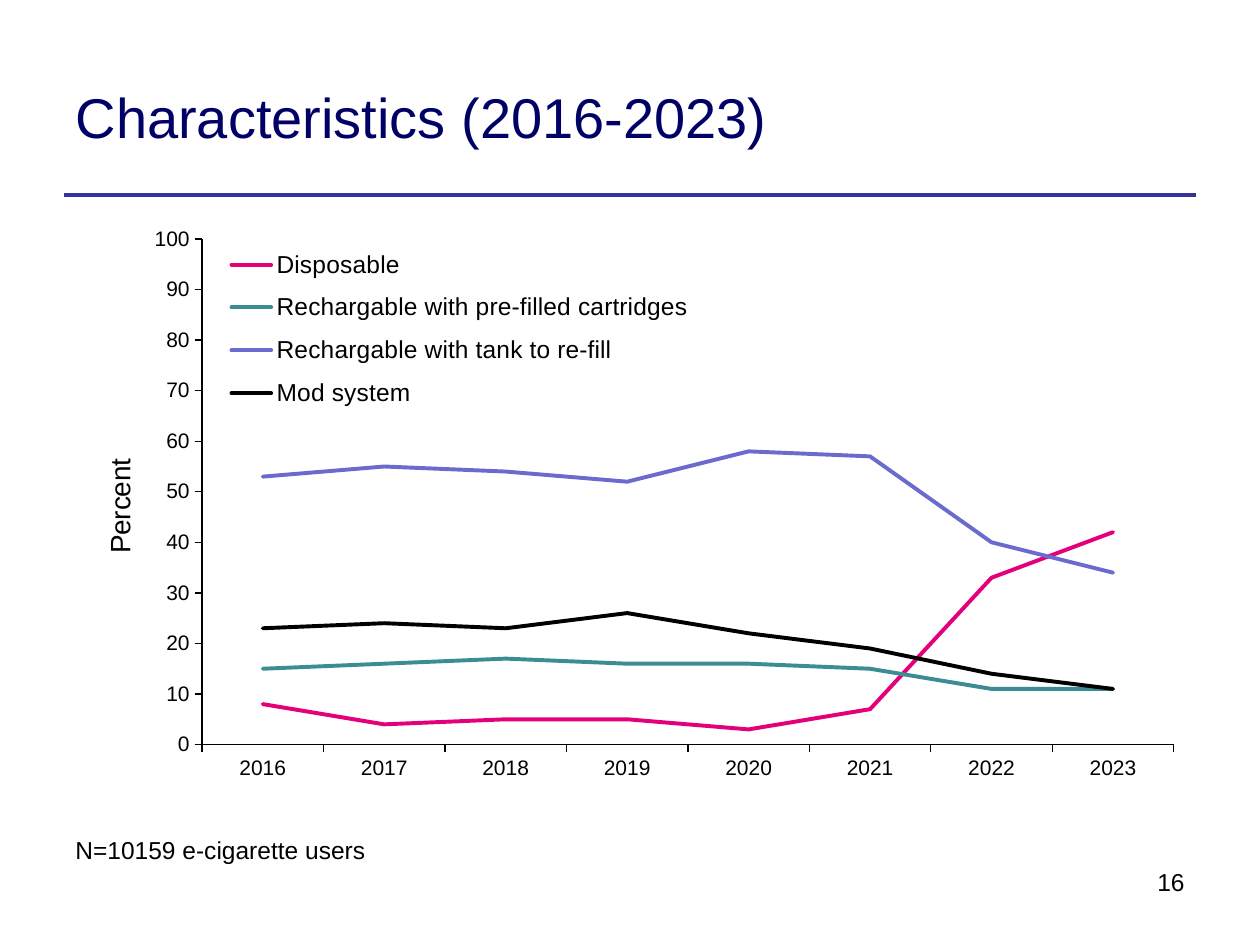
from lxml.etree import SubElement
from pptx import Presentation
from pptx.chart.data import CategoryChartData
from pptx.dml.color import RGBColor
from pptx.enum.chart import XL_CHART_TYPE as ChartType, XL_LEGEND_POSITION as LegendPosition
from pptx.enum.chart import XL_TICK_MARK as TickMark
from pptx.enum.shapes import MSO_CONNECTOR as Connector
from pptx.enum.text import MSO_ANCHOR as Anchor, PP_ALIGN as Align
from pptx.oxml import parse_xml
from pptx.oxml.ns import nsdecls, qn
from pptx.util import Cm, Pt

FONT = "Arial"
COLORS = {
    "title": "000066",
    "rule": "333399",
    "text": "000000",
    "disposable": "E5007B",
    "cartridge": "3C8C93",
    "tank": "6B6BCF",
    "mod": "000000",
}
YEARS = [str(year) for year in range(2016, 2024)]
DEVICES = [
    ("Disposable", "disposable", (8, 4, 5, 5, 3, 7, 33, 42)),
    ("Rechargable with pre-filled cartridges", "cartridge", (15, 16, 17, 16, 16, 15, 11, 11)),
    ("Rechargable with tank to re-fill", "tank", (53, 55, 54, 52, 58, 57, 40, 34)),
    ("Mod system", "mod", (23, 24, 23, 26, 22, 19, 14, 11)),
]


def color(name):
    return RGBColor.from_string(COLORS[name])


def style_font(font, size, name="text"):
    font.name = FONT
    font.size = Pt(size)
    font.bold = False
    font.color.rgb = color(name)


def style_line(line, name, width):
    line.color.rgb = color(name)
    line.width = Pt(width)


def add_run(para, text, size, name="text"):
    span = para.add_run()
    span.text = text
    style_font(span.font, size, name)


def add_title(page, text):
    title = page.shapes.title
    title.left, title.top, title.width, title.height = Cm(1.27), Cm(0.76), Cm(20.04), Cm(3.18)
    title.text_frame.vertical_anchor = Anchor.MIDDLE
    para = title.text_frame.paragraphs[0]
    para.alignment = Align.LEFT
    add_run(para, text, 32, "title")


def add_rule(page):
    rule = page.shapes.add_connector(Connector.STRAIGHT, Cm(1.3), Cm(3.94), Cm(24.1), Cm(3.94))
    style_line(rule.line, "rule", 2.25)
    SubElement(rule._element.spPr, qn("a:effectLst"))


def add_label(page, text, left, top, width, height, align=Align.LEFT):
    box = page.shapes.add_textbox(Cm(left), Cm(top), Cm(width), Cm(height))
    box.text_frame.word_wrap = True
    para = box.text_frame.paragraphs[0]
    para.alignment = align
    add_run(para, text, 14)


def place(element, index, inner=False, **fractions):
    for old in element.findall(qn("c:layout")):
        element.remove(old)
    layout = parse_xml(f"<c:layout {nsdecls('c')}><c:manualLayout/></c:layout>")
    settings = {"layoutTarget": "inner"} if inner else {}
    settings.update(xMode="edge", yMode="edge", **fractions)
    for tag, value in settings.items():
        SubElement(layout[0], qn(f"c:{tag}")).set("val", str(value))
    element.insert(index, layout)


def style_axis(axis):
    axis.has_major_gridlines = False
    axis.major_tick_mark = TickMark.OUTSIDE
    axis.minor_tick_mark = TickMark.NONE
    style_font(axis.tick_labels.font, 12)
    style_line(axis.format.line, "text", 0.75)


def add_line_chart(page):
    data = CategoryChartData()
    data.categories = YEARS
    for label, _, values in DEVICES:
        data.add_series(label, values)
    frame = page.shapes.add_chart(
        ChartType.LINE, Cm(1.27), Cm(4.37), Cm(22.86), Cm(12.57), data)
    chart = frame.chart
    chart.has_title = False
    style_font(chart.font, 10)

    for series, (_, name, _) in zip(chart.plots[0].series, DEVICES):
        series.smooth = False
        style_line(series.format.line, name, 2.25)
        series.format.line._get_or_add_ln().set("cap", "rnd")
    chart.plots[0].vary_by_categories = False

    style_axis(chart.category_axis)
    percent = chart.value_axis
    style_axis(percent)
    percent.minimum_scale, percent.maximum_scale, percent.major_unit = 0, 100, 10
    heading = percent.axis_title
    add_run(heading.text_frame.paragraphs[0], "Percent", 16)
    place(heading._element, 1, x=0.03, y=0.38)

    chart.has_legend = True
    chart.legend.position = LegendPosition.BOTTOM
    chart.legend.include_in_layout = False
    style_font(chart.legend.font, 14)
    place(chart.legend._element, 1, x=0.14, y=0.03, w=0.42, h=0.3)
    plot_area = chart._chartSpace.chart.plotArea
    place(plot_area, 0, inner=True, x=0.1226, y=0.0357, w=0.857, h=0.811)


def main():
    deck = Presentation()
    deck.slide_width, deck.slide_height = Cm(25.4), Cm(19.05)
    page = deck.slides.add_slide(deck.slide_layouts[5])
    add_rule(page)
    add_title(page, "Characteristics (2016-2023)")
    add_line_chart(page)
    add_label(page, "16", 17.09, 17.35, 7.04, 1.32, Align.RIGHT)
    add_label(page, "N=10159 e-cigarette users", 1.27, 16.71, 21.62, 0.86)
    deck.save("out.pptx")


if __name__ == "__main__":
    main()
